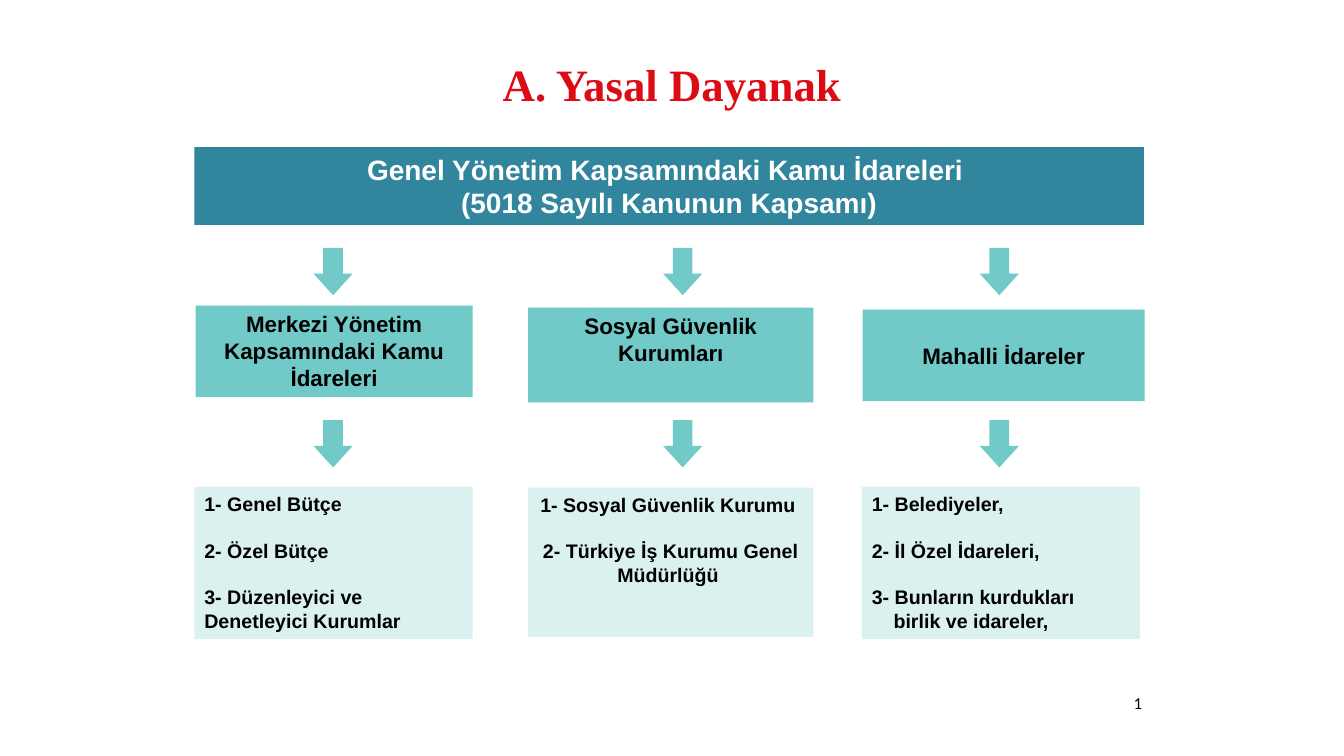
from dataclasses import dataclass

from pptx import Presentation
from pptx.dml.color import RGBColor
from pptx.enum.shapes import MSO_SHAPE
from pptx.enum.text import MSO_ANCHOR, PP_ALIGN
from pptx.util import Cm, Pt


@dataclass(frozen=True)
class Theme:
    header: RGBColor = RGBColor(0x31, 0x85, 0x9C)
    group: RGBColor = RGBColor(0x71, 0xCA, 0xC8)
    members: RGBColor = RGBColor(0xDB, 0xF1, 0xF0)
    red: RGBColor = RGBColor(0xDC, 0x0C, 0x15)
    white: RGBColor = RGBColor(0xFF, 0xFF, 0xFF)
    black: RGBColor = RGBColor(0, 0, 0)
    title_size: int = 32
    header_size: int = 20
    group_size: int = 16
    member_size: int = 14
    number_size: int = 12
    member_gap: float = 16.5


THEME = Theme()

# Each column: arrow left, group (area, lines, anchor), members (area, lines, alignment, hanging)
COLUMNS = [
    (7.9,
     ((4.93, 7.7, 6.98, 2.31), ["Merkezi Yönetim Kapsamındaki Kamu İdareleri"], MSO_ANCHOR.TOP),
     ((4.9, 12.27, 7.01, 3.84),
      ["1- Genel Bütçe", "2- Özel Bütçe", "3- Düzenleyici ve Denetleyici Kurumlar"],
      PP_ALIGN.LEFT, 0)),
    (16.71,
     ((13.31, 7.75, 7.19, 2.39), ["Sosyal Güvenlik", "Kurumları"], MSO_ANCHOR.TOP),
     ((13.31, 12.29, 7.19, 3.76),
      ["1- Sosyal Güvenlik Kurumu ", "2- Türkiye İş Kurumu Genel Müdürlüğü "],
      PP_ALIGN.CENTER, 0)),
    (24.69,
     ((21.74, 7.8, 7.11, 2.31), ["Mahalli İdareler"], MSO_ANCHOR.MIDDLE),
     ((21.72, 12.27, 7.01, 3.84),
      ["1- Belediyeler,", "2- İl Özel İdareleri,", "3- Bunların kurdukları\vbirlik ve idareler,"],
      PP_ALIGN.LEFT, 0.55)),
]
ARROW_TOPS = (6.25, 10.59)


def write(frame, lines, size, color, align=PP_ALIGN.CENTER, anchor=MSO_ANCHOR.TOP,
          font="Arial", bold=True, gap=0, hanging=0):
    frame.word_wrap = True
    frame.vertical_anchor = anchor
    frame.text = "\n".join(lines)
    for position, paragraph in enumerate(frame.paragraphs):
        paragraph.alignment = align
        if position and gap:
            paragraph.space_before = Pt(gap)
        if hanging:
            properties = paragraph._p.get_or_add_pPr()
            properties.set("marL", str(Cm(hanging)))
            properties.set("indent", str(-Cm(hanging)))
        for run in paragraph.runs:
            run.font.name = font
            run.font.size = Pt(size)
            run.font.bold = bold
            run.font.color.rgb = color


def add_filled(slide, preset, area, fill):
    shape = slide.shapes.add_shape(preset, *map(Cm, area))
    shape.shadow.inherit = False
    shape.fill.solid()
    shape.fill.fore_color.rgb = fill
    shape.line.fill.background()
    return shape


def add_panel(slide, area, fill, lines, size, color=THEME.black, **layout):
    panel = add_filled(slide, MSO_SHAPE.RECTANGLE, area, fill)
    write(panel.text_frame, lines, size, color, **layout)


def add_down_arrow(slide, left, top):
    arrow = add_filled(slide, MSO_SHAPE.DOWN_ARROW, (left, top, 0.99, 1.19), THEME.group)
    arrow.adjustments[0] = 0.5
    arrow.adjustments[1] = 0.55


def add_label(slide, area, text, size, color, **layout):
    label = slide.shapes.add_textbox(*map(Cm, area))
    write(label.text_frame, [text], size, color, **layout)


def main():
    deck = Presentation()
    deck.slide_width, deck.slide_height = Cm(33.87), Cm(19.05)
    slide = deck.slides.add_slide(deck.slide_layouts[6])

    # Title and header band
    add_label(slide, (0, 1.2, 33.87, 1.8), "A. Yasal Dayanak", THEME.title_size, THEME.red,
              anchor=MSO_ANCHOR.MIDDLE, font="Times New Roman")
    add_panel(slide, (4.9, 3.71, 23.93, 1.96), THEME.header,
              ["Genel Yönetim Kapsamındaki Kamu İdareleri ", "(5018 Sayılı Kanunun Kapsamı)"],
              THEME.header_size, THEME.white)

    # Columns: arrow, group, arrow, members
    for arrow_left, group, members in COLUMNS:
        for arrow_top in ARROW_TOPS:
            add_down_arrow(slide, arrow_left, arrow_top)
        area, lines, anchor = group
        add_panel(slide, area, THEME.group, lines, THEME.group_size, anchor=anchor)
        area, lines, align, hanging = members
        add_panel(slide, area, THEME.members, lines, THEME.member_size,
                  align=align, gap=THEME.member_gap, hanging=hanging)

    # Page number
    add_label(slide, (28.32, 17.32, 0.53, 0.76), "1", THEME.number_size, THEME.black,
              align=PP_ALIGN.LEFT, font="Calibri", bold=False)

    deck.save("out.pptx")


if __name__ == "__main__":
    main()
